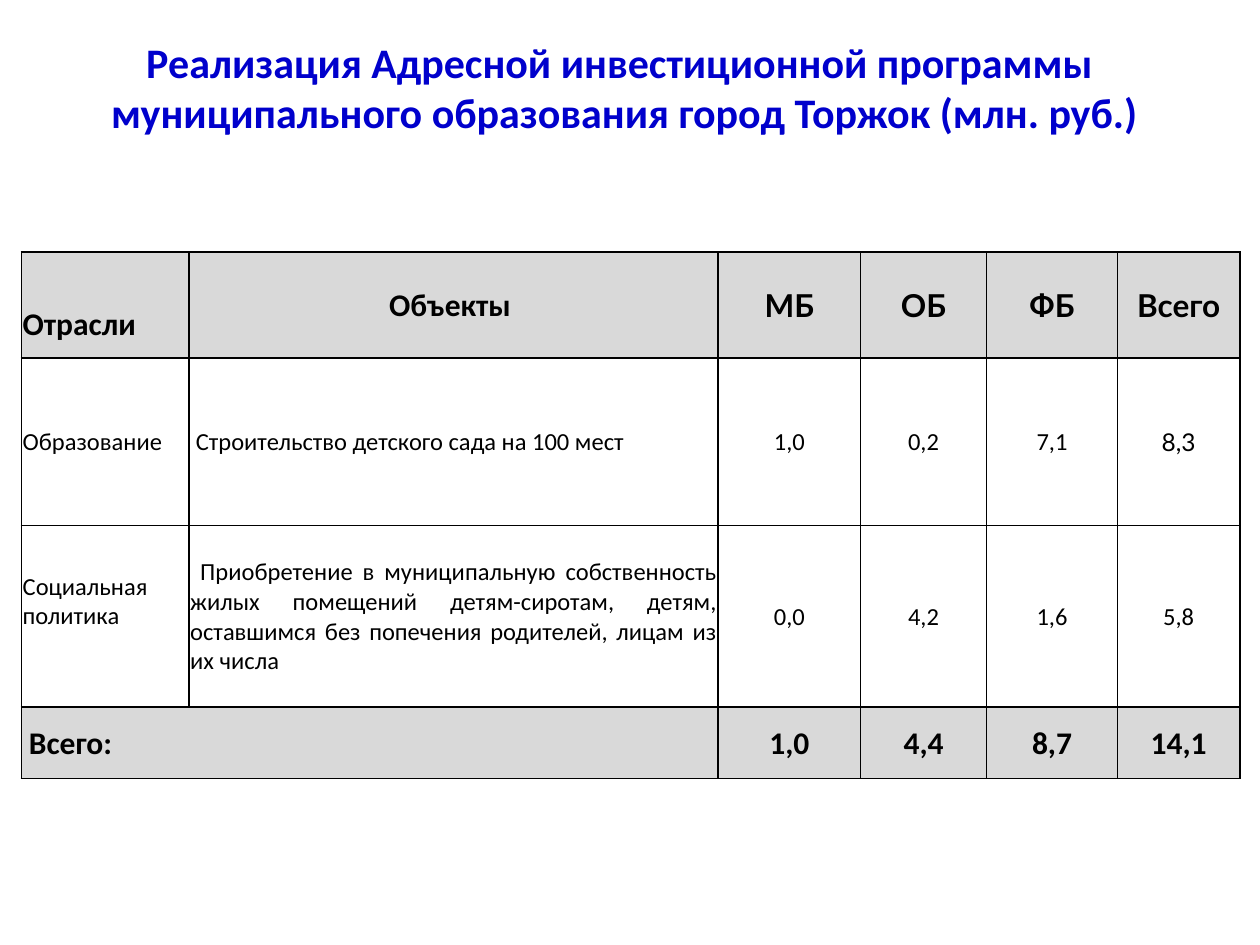
from dataclasses import dataclass

from lxml import etree
from pptx import Presentation
from pptx.dml.color import RGBColor
from pptx.enum.text import MSO_ANCHOR, PP_ALIGN
from pptx.oxml.ns import qn
from pptx.util import Inches, Pt

LEFT, CENTER, JUSTIFY = PP_ALIGN.LEFT, PP_ALIGN.CENTER, PP_ALIGN.JUSTIFY
MIDDLE = MSO_ANCHOR.MIDDLE
BLANK_LAYOUT = 6


@dataclass(frozen=True)
class Theme:
    font: str = "Calibri"
    accent_font: str = "Lato"
    title_color: RGBColor = RGBColor(0x00, 0x00, 0xCC)
    text_color: RGBColor = RGBColor(0x00, 0x00, 0x00)
    white: RGBColor = RGBColor(0xFF, 0xFF, 0xFF)
    band: RGBColor = RGBColor(0xD9, 0xD9, 0xD9)
    border: str = "000000"
    border_width: int = Pt(1)
    title_size: int = Pt(24)
    heading_size: int = Pt(18)
    body_size: int = Pt(14)


THEME = Theme()

TITLE = (
    "Реализация Адресной инвестиционной программы ",
    "муниципального образования город Торжок (млн. руб.)",
)
ROWS = (
    ("Отрасли", "Объекты ", "МБ", "ОБ", "ФБ", "Всего"),
    ("Образование", " Строительство детского сада на 100 мест",
     "1,0", "0,2", "7,1", "8,3"),
    ("Социальная политика",
     " Приобретение в муниципальную собственность жилых помещений "
     "детям-сиротам, детям, оставшимся без попечения родителей, "
     "лицам из их числа",
     "0,0", "4,2", "1,6", "5,8"),
    ("Всего:", "", "1,0", "4,4", "8,7", "14,1"),
)
COLUMN_WIDTHS = (1.33, 4.2, 1.13, 1, 1.04, 0.97)
ROW_HEIGHTS = (0.84, 1.33, 1.44, 0.57)
HEADER_ROW, TOTAL_ROW = 0, len(ROWS) - 1
FIRST_VALUE_COLUMN = 2
ACCENT_CELLS = {(0, 2), (0, 3), (0, 4), (0, 5), (1, 5)}
ALIGNMENTS = {(0, 1): CENTER, (2, 1): JUSTIFY}


def style_paragraph(para, size, color, bold, font, align):
    para.alignment = align
    for span in para.runs:
        span.font.name = font
        span.font.size = size
        span.font.bold = bold
        span.font.color.rgb = color


def add_title(page, left, top, width, height):
    box = page.shapes.add_textbox(left, top, width, height)
    box.fill.solid()
    box.fill.fore_color.rgb = THEME.white
    frame = box.text_frame
    frame.word_wrap = True
    frame.text = "\n".join(TITLE)
    for para in frame.paragraphs:
        style_paragraph(para, THEME.title_size, THEME.title_color, True,
                        THEME.font, CENTER)


def set_borders(cell):
    """Outline all four sides; border lines must precede the cell fill."""
    properties = cell._tc.get_or_add_tcPr()
    for position, side in enumerate(("lnL", "lnR", "lnT", "lnB")):
        line = etree.Element(qn(f"a:{side}"), w=str(int(THEME.border_width)))
        fill = etree.SubElement(line, qn("a:solidFill"))
        etree.SubElement(fill, qn("a:srgbClr"), val=THEME.border)
        properties.insert(position, line)


def style_cell(cell, row, column):
    emphasized = row in (HEADER_ROW, TOTAL_ROW)
    cell.fill.solid()
    cell.fill.fore_color.rgb = THEME.band if emphasized else THEME.white
    set_borders(cell)
    cell.vertical_anchor = MIDDLE
    cell.margin_left = cell.margin_right = cell.margin_top = Inches(0.01)
    cell.margin_bottom = 0
    default_align = CENTER if column >= FIRST_VALUE_COLUMN else LEFT
    style_paragraph(
        cell.text_frame.paragraphs[0],
        THEME.heading_size if emphasized else THEME.body_size,
        THEME.text_color,
        emphasized,
        THEME.accent_font if (row, column) in ACCENT_CELLS else THEME.font,
        ALIGNMENTS.get((row, column), default_align),
    )


def add_program_table(page, left, top, width, height):
    frame = page.shapes.add_table(len(ROWS), len(COLUMN_WIDTHS),
                                  left, top, width, height)
    table = frame.table
    for column, share in zip(table.columns, COLUMN_WIDTHS):
        column.width = int(width * share / sum(COLUMN_WIDTHS))
    for row, share in zip(table.rows, ROW_HEIGHTS):
        row.height = int(height * share / sum(ROW_HEIGHTS))
    for row, texts in enumerate(ROWS):
        for column, text in enumerate(texts):
            cell = table.cell(row, column)
            cell.text_frame.text = text
            style_cell(cell, row, column)
    table.cell(TOTAL_ROW, 0).merge(table.cell(TOTAL_ROW, 1))
    table.cell(HEADER_ROW, 0).margin_top = Inches(0.32)
    table.cell(2, 0).margin_bottom = Inches(0.24)
    table.cell(TOTAL_ROW, 0).margin_left = Inches(0.06)


def main():
    deck = Presentation()
    deck.slide_width, deck.slide_height = Inches(10), Inches(7.5)
    page = deck.slides.add_slide(deck.slide_layouts[BLANK_LAYOUT])
    add_title(page, Inches(0.04), Inches(0.24), Inches(9.83), Inches(0.91))
    add_program_table(page, Inches(0.17), Inches(2), Inches(9.67), Inches(4.18))
    deck.save("out.pptx")


if __name__ == "__main__":
    main()
